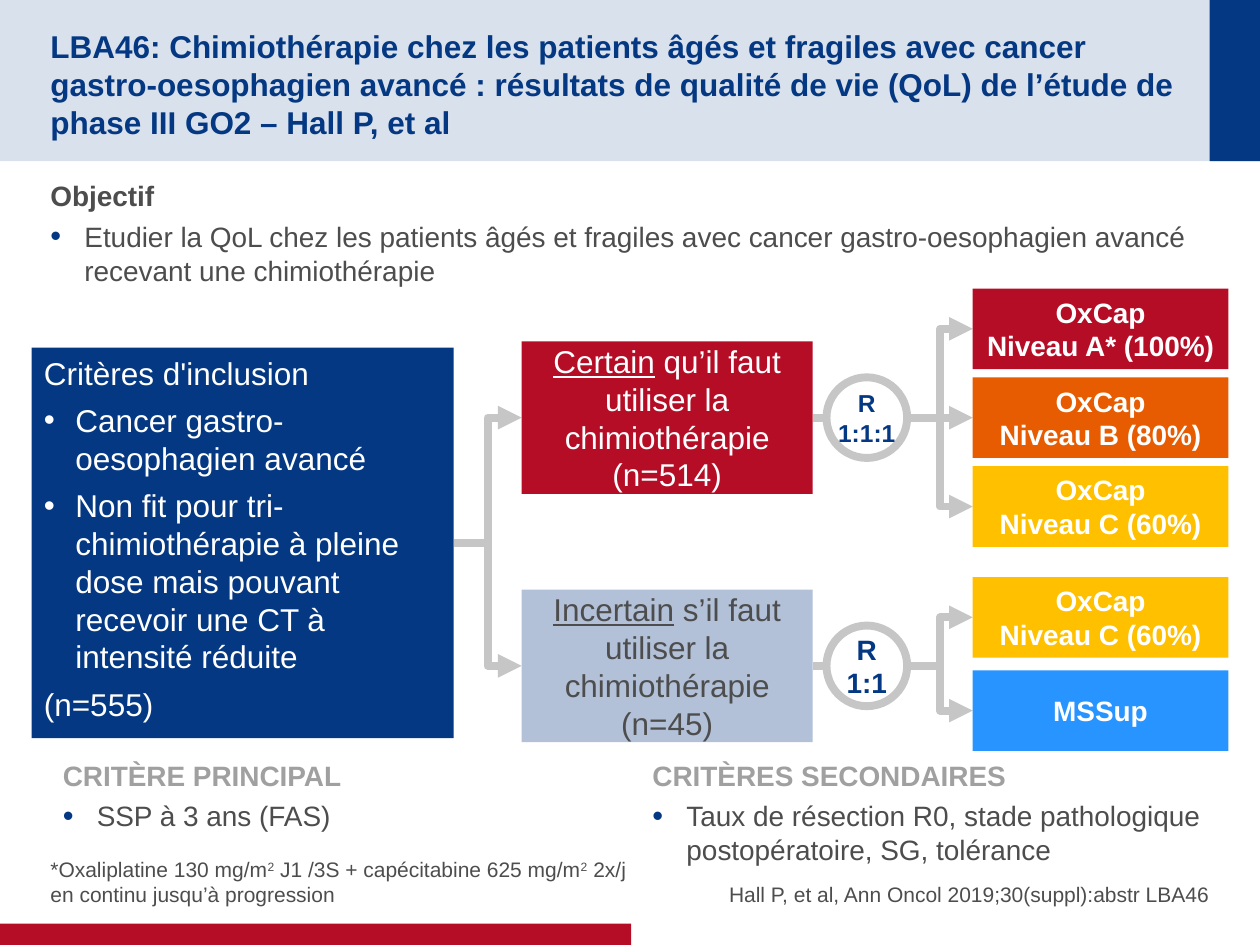
"""Builds the one-slide summary of a chemotherapy trial with its randomisation scheme."""
from dataclasses import dataclass
from typing import NamedTuple

from lxml import etree
from pptx import Presentation
from pptx import util as u
from pptx.dml.color import RGBColor
from pptx.enum import shapes, text
from pptx.oxml import ns

CELL = 0.1
RECT, OVAL = shapes.MSO_SHAPE.RECTANGLE, shapes.MSO_SHAPE.OVAL
LEFT, CENTER, RIGHT = text.PP_ALIGN.LEFT, text.PP_ALIGN.CENTER, text.PP_ALIGN.RIGHT
TOP, MIDDLE, BOTTOM = text.MSO_ANCHOR.TOP, text.MSO_ANCHOR.MIDDLE, text.MSO_ANCHOR.BOTTOM


@dataclass(frozen=True)
class Theme:
    """Font, colours and type sizes of the slide."""
    font: str = "Arial"
    navy: str = "043882"
    red: str = "B60D27"
    orange: str = "E75C00"
    yellow: str = "FFC000"
    blue: str = "2894FF"
    pale: str = "B2C0D8"
    white: str = "FFFFFF"
    body: str = "4D4D4D"
    muted: str = "A0A0A0"
    line: str = "C6C6C6"
    large: float = 18
    medium: float = 16
    small: float = 14
    note: float = 12
    stroke: float = 4.5


T = Theme()


class Box(NamedTuple):
    """Place on a grid of 100 columns and 75 rows."""
    col: float
    row: float
    cols: float
    rows: float

    @property
    def right(self) -> float:
        return self.col + self.cols

    @property
    def mid(self) -> float:
        return self.row + self.rows / 2


class Run(NamedTuple):
    text: str
    size: float = T.medium
    color: str = T.body
    bold: bool = False
    underline: bool = False
    sup: bool = False


class Para(NamedTuple):
    runs: list[Run]
    after: float = 0
    indent: float = 0
    bullet_color: str = ""


class Arm(NamedTuple):
    row: float
    lines: list[str]
    fill: str


class Stratum(NamedTuple):
    row: float
    fill: str
    color: str
    lead: str
    rest: str
    ratio: str
    ratio_size: float
    arms: list[Arm]


def grid(*cells: float) -> list[int]:
    """Convert grid cells to slide lengths."""
    return [u.Inches(c * CELL) for c in cells]


def sub(parent, tag: str, **attrs: str):
    """Append a drawing element."""
    return etree.SubElement(parent, ns.qn(tag), attrs)


def write(sp, paras: list[Para], align=LEFT, anchor=TOP, insets=(1, 0.5, 1, 0.5), wrap=True) -> None:
    """Fill the text frame of a shape run by run."""
    tf = sp.text_frame
    tf.auto_size, tf.word_wrap, tf.vertical_anchor = text.MSO_AUTO_SIZE.NONE, wrap, anchor
    tf.margin_left, tf.margin_top, tf.margin_right, tf.margin_bottom = grid(*insets)
    for i, para in enumerate(paras):
        p = tf.add_paragraph() if i else tf.paragraphs[0]
        p.alignment, p.space_before, p.space_after = align, u.Pt(0), u.Pt(para.after)
        pPr = p._p.get_or_add_pPr()
        indent = u.Inches(para.indent)
        pPr.set("marL", str(indent))
        pPr.set("indent", str(-indent))
        if para.bullet_color:
            sub(sub(pPr, "a:buClr"), "a:srgbClr", val=para.bullet_color)
            sub(pPr, "a:buSzPct", val="110000")
        if indent:
            sub(pPr, "a:buFont", typeface=T.font)
            sub(pPr, "a:buChar", char="•")
        else:
            sub(pPr, "a:buNone")
        for run in para.runs:
            for j, part in enumerate(run.text.split("\n")):
                if j:
                    p.add_line_break()
                r = p.add_run()
                r.text = part
                r.font.name, r.font.size = T.font, u.Pt(run.size)
                r.font.bold, r.font.underline = run.bold, run.underline
                r.font.color.rgb = RGBColor.from_string(run.color)
                if run.sup:
                    r._r.get_or_add_rPr().set("baseline", "30000")


def place(sp, box: Box):
    """Move a placeholder onto the grid."""
    sp.left, sp.top, sp.width, sp.height = grid(*box)
    return sp


def block(s, box: Box, fill: str = "", line: str = "", kind=RECT):
    """Draw a flat shape."""
    sp = s.shapes.add_shape(kind, *grid(*box))
    sp.shadow.inherit = False
    for part, color in ((sp.fill, fill), (sp.line.fill, line)):
        if color:
            part.solid()
            part.fore_color.rgb = RGBColor.from_string(color)
        else:
            part.background()
    if line:
        sp.line.width = u.Pt(T.stroke)
    return sp


def link(s, x1: float, y1: float, x2: float, y2: float, arrow: bool = True) -> None:
    """Join two grid points, with an elbow where the rows differ."""
    kind = shapes.MSO_CONNECTOR.STRAIGHT if abs(y1 - y2) < 0.1 else shapes.MSO_CONNECTOR.ELBOW
    c = s.shapes.add_connector(kind, *grid(x1, y1, x2, y2))
    c.line.width = u.Pt(T.stroke)
    c.line.color.rgb = RGBColor.from_string(T.line)
    ln = c.line._get_or_add_ln()
    sub(ln, "a:round")
    if arrow:
        sub(ln, "a:tailEnd", type="triangle")
    sub(c._element.spPr, "a:effectLst")


def bullets(heading: str, color: str, item: str) -> list[Para]:
    """Make a bold heading followed by one bullet."""
    return [Para([Run(heading, color=color, bold=True)], 4), Para([Run(item)], 4, 0.27, T.navy)]


def draw_frame(s) -> None:
    """Put the coloured bands behind the placeholders."""
    bands = [block(s, Box(0, 0, 100, 12.8), T.navy), block(s, Box(96, 0, 4, 12.8), T.navy),
             block(s, Box(0, 73.3, 50.1, 1.7), T.red)]
    color = bands[0]._element.spPr.find(".//" + ns.qn("a:srgbClr"))
    sub(color, "a:alpha", val="15000")
    for i, sp in enumerate(bands):
        s.shapes._spTree.insert(2 + i, sp._element)


def draw_stratum(s, start: Box, st: Stratum) -> None:
    """Draw one stratum, its randomisation and its arms."""
    box = Box(41.4, st.row, 23.1, 12.1)
    ring = Box(65.6, box.mid - 3.2, 6.4, 6.4)
    link(s, start.right, start.mid, box.col, box.mid)
    link(s, box.right, box.mid, ring.col, box.mid, arrow=False)
    lead = Run(st.lead, T.large, st.color, underline=True)
    write(block(s, box, st.fill), [Para([lead, Run(st.rest, T.large, st.color)])], CENTER, MIDDLE, (1, 0, 1, 0))
    write(block(s, ring, line=T.line, kind=OVAL), [Para([Run(st.ratio, st.ratio_size, T.navy, True)])],
          CENTER, MIDDLE, wrap=False)
    for arm in st.arms:
        target = Box(77.2, arm.row, 20.3, 6.4)
        link(s, ring.right, ring.mid, target.col, target.mid)
        write(block(s, target, arm.fill), [Para([Run(t, color=T.white, bold=True)]) for t in arm.lines],
              CENTER, MIDDLE)


def main() -> None:
    """Build and save the slide."""
    prs = Presentation()
    prs.slide_width, prs.slide_height = grid(100, 75)
    s = prs.slides.add_slide(prs.slide_layouts[4])
    ph = {p.placeholder_format.idx: p for p in s.placeholders}
    ph[4]._element.getparent().remove(ph[4]._element)
    draw_frame(s)

    title = ("LBA46: Chimiothérapie chez les patients âgés et fragiles avec cancer gastro-oesophagien avancé : "
             "résultats de qualité de vie (QoL) de l’étude de phase III GO2 – Hall P, et al")
    write(place(ph[0], Box(4, 2, 90.1, 8.8)), [Para([Run(title, T.large, T.navy, True)])],
          anchor=MIDDLE, insets=(0, 0.5, 0, 0))
    aim = ("Etudier la QoL chez les patients âgés et fragiles avec cancer gastro-oesophagien avancé "
           "recevant une chimiothérapie")
    write(place(ph[2], Box(4, 13.7, 92, 51.9)), bullets("Objectif", T.body, aim), insets=(0, 0.5, 0, 0.5))
    dose = [Run(t, T.note, sup=t == "2") for t in (
        "*Oxaliplatine 130 mg/m", "2", " J1 /3S + capécitabine 625 mg/m", "2", " 2x/j en continu jusqu’à progression")]
    source = [Run("Hall P, et al, Ann Oncol 2019;30(suppl):abstr LBA46", T.note)]
    for idx, box, runs, align in ((1, Box(4, 66.7, 46, 5.3), dose, LEFT), (3, Box(50.8, 66.7, 45.2, 5.3), source, RIGHT)):
        write(place(ph[idx], box), [Para(runs, 4)], align, BOTTOM, (0, 0, 0, 0))

    start = Box(2.5, 27.6, 33.5, 31)
    criteria = [("Critères d'inclusion", 0), ("Cancer gastro-oesophagien avancé", 0.25),
                ("Non fit pour tri-chimiothérapie à pleine dose mais pouvant recevoir une CT à intensité réduite", 0.25),
                ("(n=555)", 0)]
    write(block(s, start, T.navy), [Para([Run(t, T.large, T.white)], 5.4, ind) for t, ind in criteria])
    level_c = ["OxCap", "Niveau C (60%)"]
    for st in (
        Stratum(27.1, T.red, T.white, "Certain", " qu’il faut utiliser la chimiothérapie (n=514)", "R\n1:1:1", T.small,
                [Arm(22.9, ["OxCap", "Niveau A* (100%)"], T.red), Arm(29.95, ["OxCap", "Niveau B (80%)"], T.orange),
                 Arm(37, level_c, T.yellow)]),
        Stratum(46.8, T.pale, T.body, "Incertain", " s’il faut utiliser la chimiothérapie (n=45)", "R\n1:1", T.medium,
                [Arm(45.8, level_c, T.yellow), Arm(53.2, ["MSSup"], T.blue)]),
    ):
        draw_stratum(s, start, st)

    for col, heading, item in (
        (4, "CRITÈRE PRINCIPAL", "SSP à 3 ans (FAS)"),
        (50.8, "CRITÈRES SECONDAIRES", "Taux de résection R0, stade pathologique postopératoire, SG, tolérance"),
    ):
        write(s.shapes.add_textbox(*grid(col, 59.7, 48.3, 8.7)), bullets(heading, T.muted, item))
    prs.save("out.pptx")


if __name__ == "__main__":
    main()
